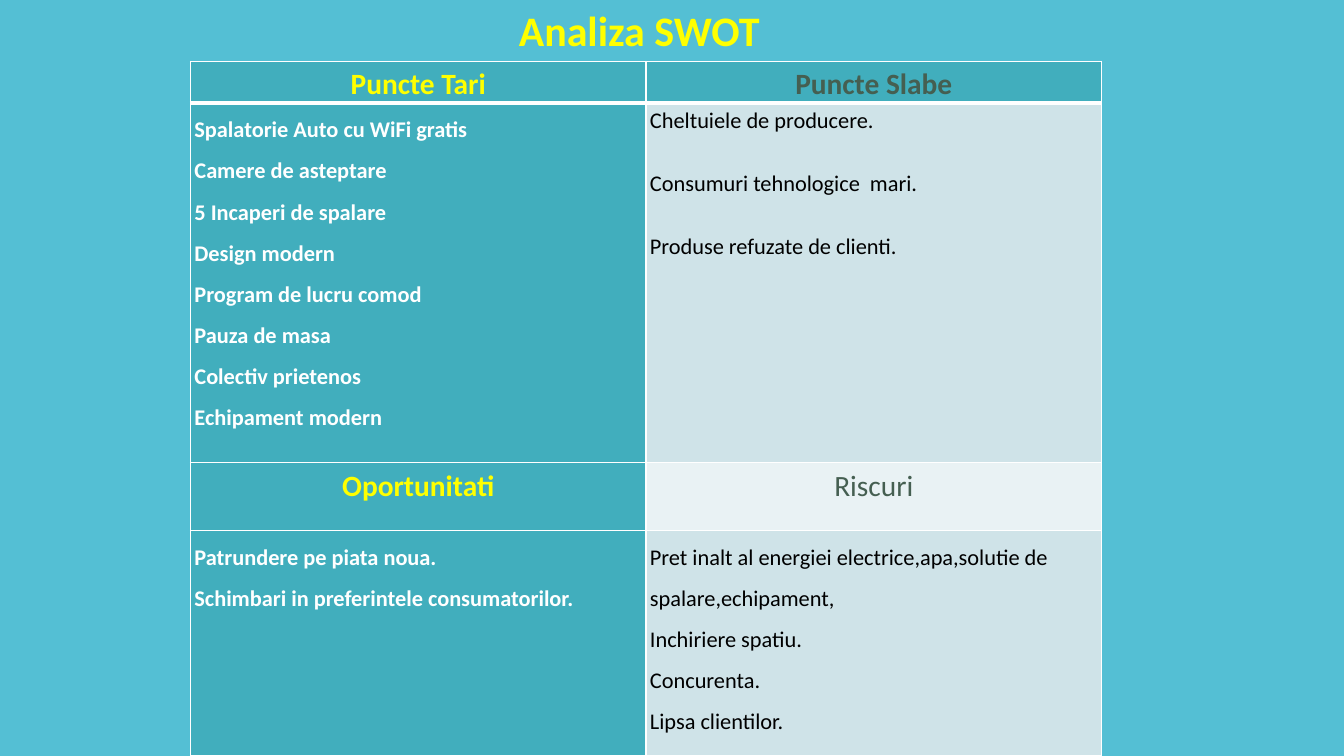
"""Build a one-slide SWOT analysis table."""
import pptx
import pptx.dml.color
import pptx.enum.text
import pptx.oxml.ns
import pptx.util
from lxml import etree

Cm, Pt = pptx.util.Cm, pptx.util.Pt
RGB = pptx.dml.color.RGBColor
ALIGN = pptx.enum.text.PP_ALIGN

BACK = RGB(0x54, 0xBF, 0xD4)
TEAL = RGB(0x41, 0xAE, 0xBD)
PALE = RGB(0xCF, 0xE3, 0xE8)
MIST = RGB(0xE9, 0xF2, 0xF4)
YELLOW = RGB(0xFF, 0xFF, 0x00)
GREEN = RGB(0x45, 0x5F, 0x51)
WHITE = RGB(0xFF, 0xFF, 0xFF)
BLACK = RGB(0x00, 0x00, 0x00)

TITLE = "Analiza SWOT"
ROWS = [
    (["Puncte Tari"], ["Puncte Slabe"]),
    (["Spalatorie Auto cu WiFi gratis", "Camere de asteptare",
      "5 Incaperi de spalare", "Design modern", "Program de lucru comod",
      "Pauza de masa", "Colectiv prietenos", "Echipament modern"],
     ["Cheltuiele de producere.", "Consumuri tehnologice  mari.",
      "Produse refuzate de clienti."]),
    (["Oportunitati"], ["Riscuri"]),
    (["Patrundere pe piata noua.",
      "Schimbari in preferintele consumatorilor."],
     ["Pret inalt al energiei electrice,apa,solutie de spalare,echipament,",
      "Inchiriere spatiu.", "Concurenta.", "Lipsa clientilor."]),
]
FILLS = [(TEAL, TEAL), (TEAL, PALE), (TEAL, MIST), (TEAL, PALE)]
TALL = [1.04, 9.07, 1.7, 5.69]
LEFT, TOP, WIDE = 4.8, 1.55, 22.96

HEAD = {"size": Pt(21), "bold": True, "name": "Calibri"}
BODY = {"size": Pt(16), "bold": True, "name": "Calibri"}
NAME = {"size": Pt(30), "bold": True, "name": "Calibri"}


def write(frame, lines, font, color, align, space=1.0, gap=0):
    for i, line in enumerate(lines):
        para = frame.paragraphs[0] if i == 0 else frame.add_paragraph()
        para.alignment, para.line_spacing = align, space
        para.space_after = Pt(gap)
        run = para.add_run()
        run.text = line
        for key, value in font.items():
            setattr(run.font, key, value)
        run.font.color.rgb = color


def edge(cell, widths):
    props = cell._tc.get_or_add_tcPr()
    tag = pptx.oxml.ns.qn
    for side, width in widths.items():
        line = etree.SubElement(props, tag("a:ln" + side), w=str(Pt(width)))
        fill = etree.SubElement(line, tag("a:solidFill"))
        etree.SubElement(fill, tag("a:srgbClr"), val=str(WHITE))


def fill(cell, row, col):
    head = row % 2 == 0
    edge(cell, {"L": 1, "R": 1, "T": 3 if row == 1 else 1,
                "B": 3 if row == 0 else 1})
    cell.fill.solid()
    cell.fill.fore_color.rgb = FILLS[row][col]
    cell.margin_left = cell.margin_right = Cm(0.1)
    cell.margin_top = cell.margin_bottom = 0
    font = dict(HEAD if head else BODY)
    font["bold"] = col == 0 or row == 0
    color = ((YELLOW, GREEN) if head else (WHITE, BLACK))[col]
    loose = (row, col) == (1, 1)
    write(cell.text_frame, ROWS[row][col], font, color,
          ALIGN.CENTER if head else ALIGN.LEFT,
          1.15 if head or loose else 1.5, 22.5 if loose else 0)


def main():
    deck = pptx.Presentation()
    deck.slide_width, deck.slide_height = Cm(33.87), Cm(19.05)
    slide = deck.slides.add_slide(deck.slide_layouts[6])
    slide.background.fill.solid()
    slide.background.fill.fore_color.rgb = BACK

    grid = slide.shapes.add_table(len(ROWS), 2, Cm(LEFT), Cm(TOP),
                                  Cm(WIDE), Cm(sum(TALL))).table
    for col in grid.columns:
        col.width = Cm(WIDE / 2)
    for row, tall in enumerate(TALL):
        grid.rows[row].height = Cm(tall)
        for col in range(2):
            fill(grid.cell(row, col), row, col)

    box = slide.shapes.add_textbox(Cm(12.8), 0, Cm(6.63), Cm(TOP))
    box.text_frame.word_wrap = False
    write(box.text_frame, [TITLE], NAME, YELLOW, ALIGN.CENTER)
    deck.save("out.pptx")


if __name__ == "__main__":
    main()
